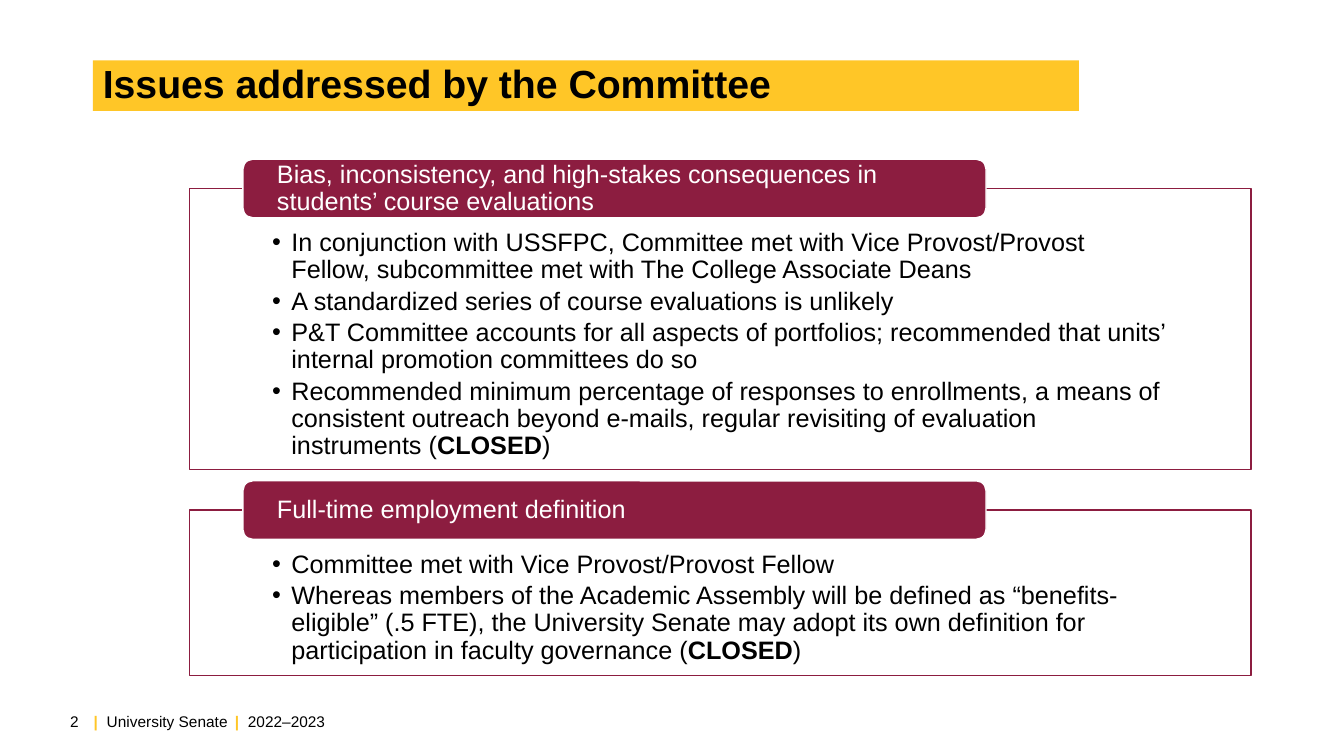
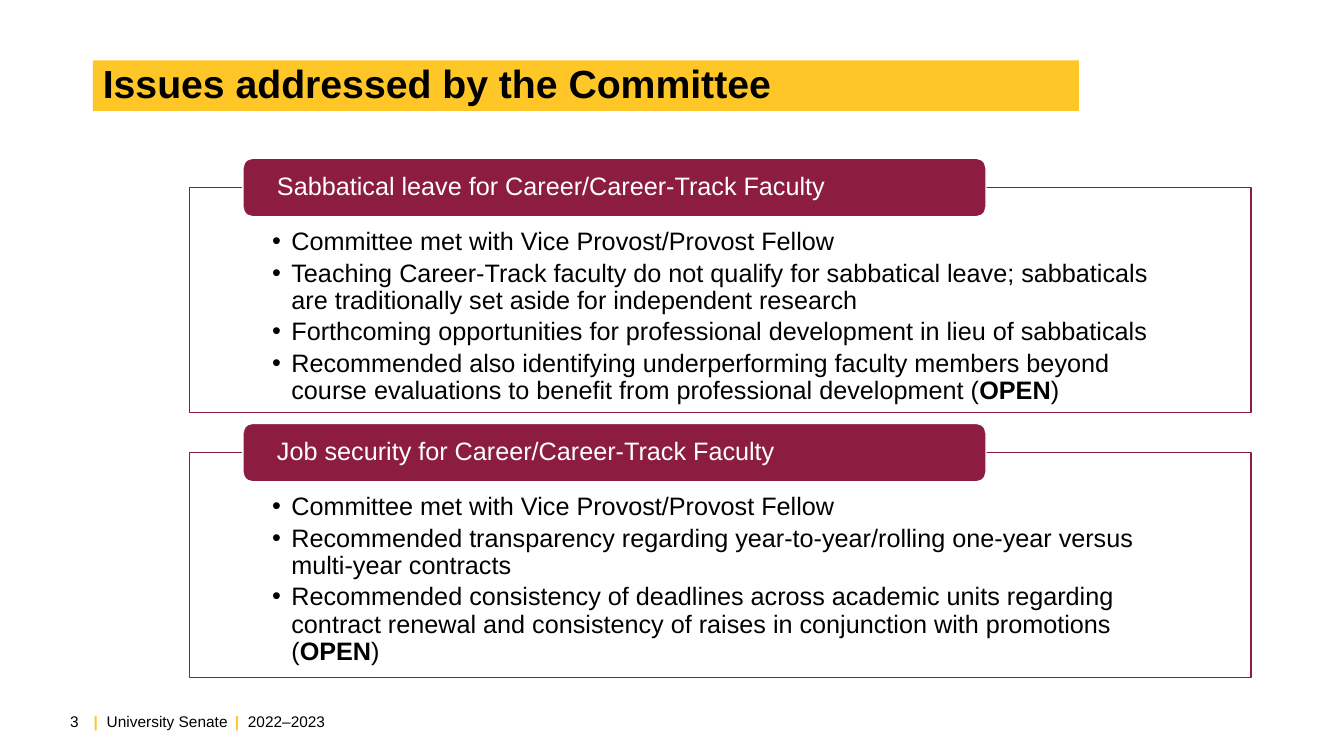
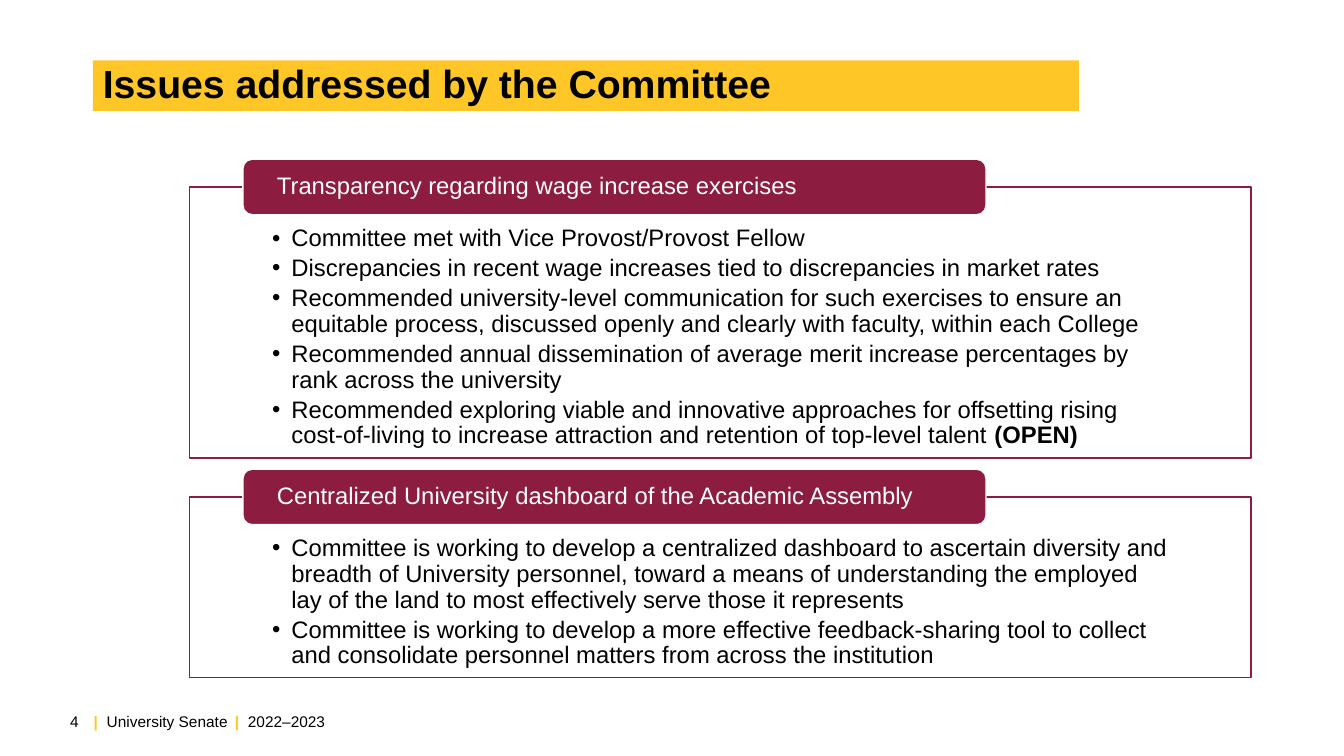
import pptx
import pptx.util
import pptx.dml.color
import pptx.enum.shapes
import pptx.enum.text
import pptx.oxml
import pptx.oxml.ns

Inches, Pt = pptx.util.Inches, pptx.util.Pt
RGB = pptx.dml.color.RGBColor.from_string
ALIGN = pptx.enum.text.PP_ALIGN
MIDDLE = pptx.enum.text.MSO_ANCHOR.MIDDLE

COLORS = {"gold": "FFC627", "maroon": "8C1D40", "black": "000000", "white": "FFFFFF"}
FONT = "Arial"
TITLE = "Issues addressed by the Committee"
FOOTER = [("|", "gold"), ("\tUniversity Senate\t", "black"), ("|", "gold"), ("\t2022–2023", "black")]
FOOTER_TABS = [0.13, 1.4, 1.53]
FIRST_PAGE = 2
PANEL_GAP = 0.11

SLIDES = [
    {"top": 1.58, "tab_height": 0.58, "size": 18, "insets": (0.41, 0.14), "panels": [
        ("Bias, inconsistency, and high-stakes consequences in students’ course evaluations", 2.79, [
            "In conjunction with USSFPC, Committee met with Vice Provost/Provost Fellow, subcommittee met with The College Associate Deans",
            "A standardized series of course evaluations is unlikely",
            "P&T Committee accounts for all aspects of portfolios; recommended that units’ internal promotion committees do so",
            "Recommended minimum percentage of responses to enrollments, a means of consistent outreach beyond e-mails, regular revisiting of evaluation instruments (**CLOSED**)",
        ]),
        ("Full-time employment definition", 1.64, [
            "Committee met with Vice Provost/Provost Fellow",
            "Whereas members of the Academic Assembly will be defined as “benefits-eligible” (.5 FTE), the University Senate may adopt its own definition for participation in faculty governance (**CLOSED**)",
        ]),
    ]},
    {"top": 1.57, "tab_height": 0.58, "size": 18, "insets": (0.41, 0.14), "panels": [
        ("Sabbatical leave for Career/Career-Track Faculty", 2.23, [
            "Committee met with Vice Provost/Provost Fellow",
            "Teaching Career-Track faculty do not qualify for sabbatical leave; sabbaticals are traditionally set aside for independent research",
            "Forthcoming opportunities for professional development in lieu of sabbaticals",
            "Recommended also identifying underperforming faculty members beyond course evaluations to benefit from professional development (**OPEN**)",
        ]),
        ("Job security for Career/Career-Track Faculty", 2.23, [
            "Committee met with Vice Provost/Provost Fellow",
            "Recommended transparency regarding year-to-year/rolling one-year versus multi-year contracts",
            "Recommended consistency of deadlines across academic units regarding contract renewal and consistency of raises in conjunction with promotions (**OPEN**)",
        ]),
    ]},
    {"top": 1.58, "tab_height": 0.55, "size": 17, "insets": (0.39, 0.13), "panels": [
        ("Transparency regarding wage increase exercises", 2.69, [
            "Committee met with Vice Provost/Provost Fellow",
            "Discrepancies in recent wage increases tied to discrepancies in market rates",
            "Recommended university-level communication for such exercises to ensure an equitable process, discussed openly and clearly with faculty, within each College",
            "Recommended annual dissemination of average merit increase percentages by rank across the university",
            "Recommended exploring viable and innovative approaches for offsetting rising cost-of-living to increase attraction and retention of top-level talent **(OPEN)**",
        ]),
        ("Centralized University dashboard of the Academic Assembly", 1.79, [
            "Committee is working to develop a centralized dashboard to ascertain diversity and breadth of University personnel, toward a means of understanding the employed lay of the land to most effectively serve those it represents",
            "Committee is working to develop a more effective feedback-sharing tool to collect and consolidate personnel matters from across the institution",
        ]),
    ]},
]


def place(sp, left, top, width, height):
    sp.left, sp.top, sp.width, sp.height = map(Inches, (left, top, width, height))


def paint(sp, fill, line):
    sp.fill.solid()
    sp.fill.fore_color.rgb = RGB(COLORS[fill])
    sp.line.color.rgb = RGB(COLORS[line])
    sp.line.width = Pt(1)


def set_font(p, size, color, bold=False):
    p.font.name, p.font.size, p.font.bold = FONT, Pt(size), bold
    p.font.color.rgb = RGB(COLORS[color])


def prepare(sp, left=0.1, top=0.05, right=0.1, bottom=0.05, anchor=MIDDLE):
    tf = sp.text_frame
    tf.word_wrap = True
    tf.auto_size = pptx.enum.text.MSO_AUTO_SIZE.NONE
    tf.vertical_anchor = anchor
    tf.margin_left, tf.margin_top, tf.margin_right, tf.margin_bottom = map(Inches, (left, top, right, bottom))
    return tf


def add_child(parent, tag, **attrs):
    child = pptx.oxml.parse_xml(f"<a:{tag} {pptx.oxml.ns.nsdecls('a')}/>")
    for name, value in attrs.items():
        child.set(name, str(value))
    parent.append(child)
    return child


def add_title(s):
    sp = s.shapes.title
    place(sp, 0.92, 0.6, 9.78, 0.5)
    sp.fill.solid()
    sp.fill.fore_color.rgb = RGB(COLORS["gold"])
    p = prepare(sp).paragraphs[0]
    p.text = TITLE
    p.alignment = ALIGN.LEFT
    p.line_spacing = Pt(30)
    set_font(p, 28, "black", True)


def add_footer(s, page):
    sp = s.shapes.add_textbox(Inches(0.83), Inches(6.96), Inches(5.09), Inches(0.4))
    p = prepare(sp).paragraphs[0]
    tabs = add_child(p._p.get_or_add_pPr(), "tabLst")
    for stop in FOOTER_TABS:
        add_child(tabs, "tab", pos=Inches(stop), algn="l")
    set_font(p, 11, "black")
    for text, color in FOOTER:
        r = p.add_run()
        r.text = text
        r.font.name, r.font.size = FONT, Pt(11)
        r.font.bold = color == "gold"
        r.font.color.rgb = RGB(COLORS[color])
    sp = s.shapes.add_textbox(Inches(0.39), Inches(6.96), Inches(0.49), Inches(0.4))
    p = prepare(sp).paragraphs[0]
    p.text = str(page)
    p.alignment = ALIGN.RIGHT
    set_font(p, 11, "black")


def fill_panel(sp, top, height, bullets, size, insets):
    place(sp, 1.88, top, 10.53, height)
    paint(sp, "white", "maroon")
    tf = prepare(sp, 0.82, insets[0], 0.82, insets[1], pptx.enum.text.MSO_ANCHOR.TOP)
    for i, bullet in enumerate(bullets):
        p = tf.add_paragraph() if i else tf.paragraphs[0]
        pPr = p._p.get_or_add_pPr()
        pPr.set("marL", str(Inches(0.19)))
        pPr.set("indent", str(Inches(-0.19)))
        add_child(pPr, "buChar", char="•")
        p.line_spacing = 0.9
        p.space_before, p.space_after = Pt(0), Pt(3)
        set_font(p, size, "black")
        for j, text in enumerate(bullet.split("**")):
            if text:
                r = p.add_run()
                r.text = text
                if j % 2:
                    r.font.bold = True


def add_tab(s, top, height, heading, size):
    sp = s.shapes.add_shape(pptx.enum.shapes.MSO_SHAPE.ROUNDED_RECTANGLE,
                            Inches(2.41), Inches(top), Inches(7.37), Inches(height))
    sp.shadow.inherit = False
    paint(sp, "maroon", "white")
    p = prepare(sp, 0.31, 0, 0.31, 0).paragraphs[0]
    p.text = heading
    p.alignment = ALIGN.LEFT
    p.line_spacing = 0.9
    set_font(p, size, "white")


def main():
    prs = pptx.Presentation()
    prs.slide_width, prs.slide_height = Inches(13.33), Inches(7.5)
    for page, slide in enumerate(SLIDES, FIRST_PAGE):
        s = prs.slides.add_slide(prs.slide_layouts[3])
        add_title(s)
        add_footer(s, page)
        top, tab_height, size = slide["top"], slide["tab_height"], slide["size"]
        bodies = [sp for sp in s.placeholders if sp.placeholder_format.idx]
        for body, (heading, height, bullets) in zip(bodies, slide["panels"]):
            panel_top = top + tab_height / 2
            fill_panel(body, panel_top, height, bullets, size, slide["insets"])
            add_tab(s, top, tab_height, heading, size)
            top = panel_top + height + PANEL_GAP
    prs.save("out.pptx")


if __name__ == "__main__":
    main()
